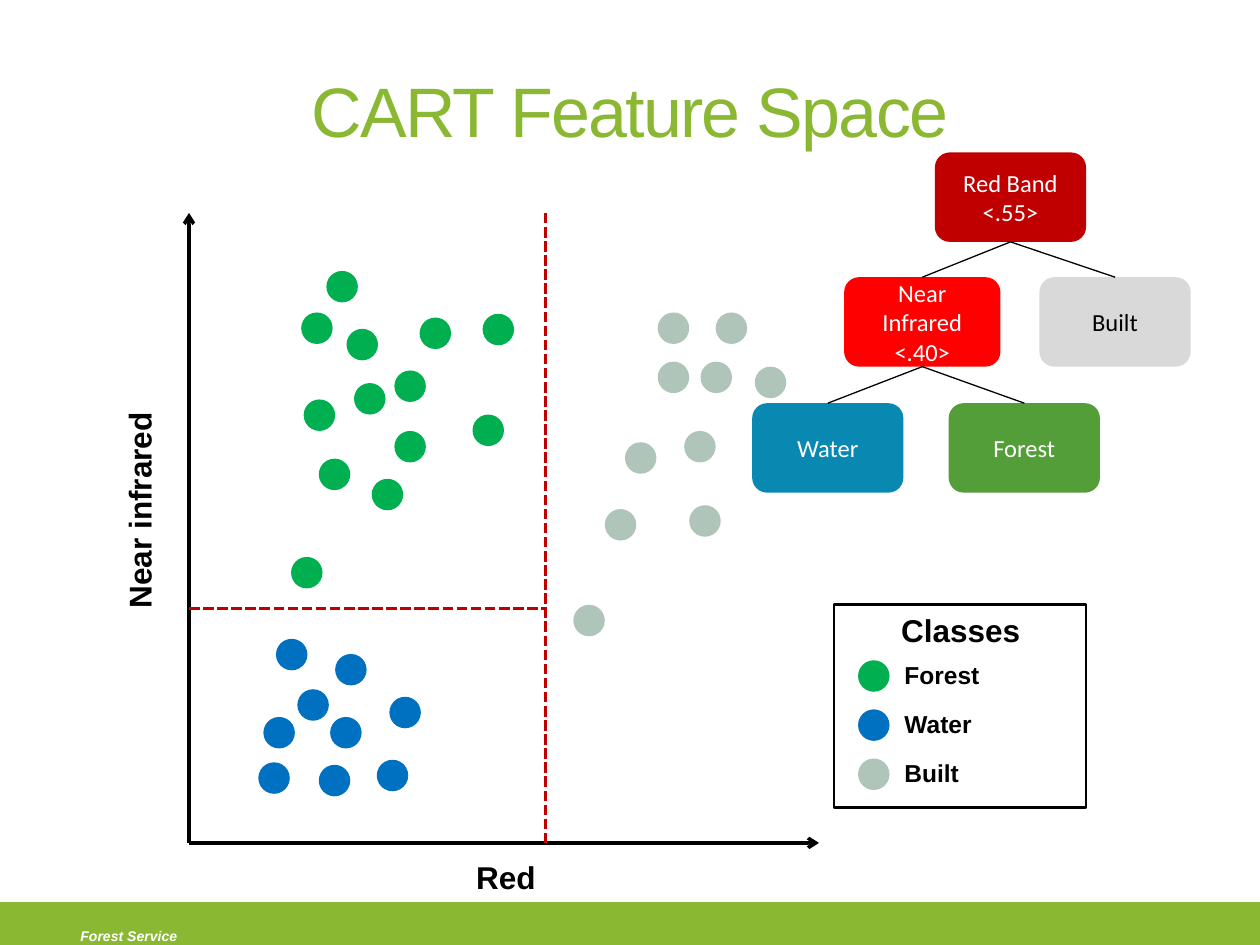
from dataclasses import dataclass

from lxml import etree
from pptx import Presentation
from pptx.dml.color import RGBColor
from pptx.enum.dml import MSO_LINE_DASH_STYLE as Dash
from pptx.enum.shapes import MSO_CONNECTOR, MSO_SHAPE as Shape
from pptx.enum.text import MSO_ANCHOR as Anchor, PP_ALIGN as Align
from pptx.oxml.ns import qn
from pptx.util import Inches, Pt


@dataclass(frozen=True)
class Theme:
    accent: str = "8AB833"
    ink: str = "000000"
    paper: str = "FFFFFF"
    split: str = "C00000"
    red_node: str = "C00000"
    infrared_node: str = "FF0000"
    built_node: str = "D9D9D9"
    water_node: str = "0989B1"
    forest_node: str = "549E39"
    forest: str = "00B050"
    water: str = "0070C0"
    built: str = "AFC5B9"
    font: str = "Arial"
    node_font: str = "Calibri"
    title_size: int = 40
    heading_size: int = 18
    label_size: int = 14
    footer_size: int = 8


THEME = Theme()
DOT = 0.25

# Dot corners, in inches from the top left of the plot
SAMPLES = {
    THEME.water: [(0.59, 4), (0.86, 3.78), (0.69, 3.38), (1.03, 4.38), (1.12, 4),
                  (1.16, 3.5), (0.55, 4.36), (1.49, 4.34), (1.59, 3.84)],
    THEME.forest: [(1.09, 0.46), (0.89, 0.79), (1.25, 0.92), (1.31, 1.35), (1.83, 0.83),
                   (1.03, 1.95), (2.33, 0.8), (1.63, 1.73), (0.91, 1.48), (1.63, 1.25),
                   (1.45, 2.11), (2.25, 1.6), (0.81, 2.73)],
    THEME.built: [(3.72, 1.18), (3.93, 1.73), (4.49, 1.22), (3.97, 2.32), (3.05, 3.11),
                  (3.46, 1.82), (4.06, 1.18), (3.3, 2.35), (3.72, 0.79), (4.18, 0.79)],
}


def color(value):
    return RGBColor.from_string(value)


def style_text(shape, text, size, ink=THEME.ink, font=THEME.font, bold=False,
               italic=False, align=Align.LEFT):
    shape.text_frame.text = text
    shape.text_frame.word_wrap = True
    for paragraph in shape.text_frame.paragraphs:
        paragraph.alignment = align
        for run in paragraph.runs:
            run.font.name, run.font.size = font, Pt(size)
            run.font.bold, run.font.italic = bold, italic
            run.font.color.rgb = color(ink)


def add_label(shapes, left, top, width, height, text, size, **style):
    label = shapes.add_textbox(*map(Inches, (left, top, width, height)))
    style_text(label, text, size, **style)
    return label


def add_block(shapes, kind, left, top, width, height, fill=None, line=None, weight=1.5):
    block = shapes.add_shape(kind, *map(Inches, (left, top, width, height)))
    block.shadow.inherit = False
    if fill:
        block.fill.solid()
        block.fill.fore_color.rgb = color(fill)
    else:
        block.fill.background()
    if line:
        block.line.color.rgb = color(line)
        block.line.width = Pt(weight)
    else:
        block.line.fill.background()
    return block


def add_dot(shapes, left, top, fill):
    add_block(shapes, Shape.FLOWCHART_CONNECTOR, left, top, DOT, DOT, fill)


def add_line(shapes, start, end, ink, weight, dash=None, arrow=False):
    line = shapes.add_connector(MSO_CONNECTOR.STRAIGHT, *map(Inches, (*start, *end)))
    line.line.color.rgb = color(ink)
    line.line.width = Pt(weight)
    if dash:
        line.line.dash_style = dash
    if arrow:
        etree.SubElement(line.line._get_or_add_ln(), qn("a:tailEnd"), type="arrow")
    etree.SubElement(line._element.spPr, qn("a:effectLst"))
    return line


def add_title(slide, left, top, width, height):
    title = slide.shapes.title
    title.left, title.top, title.width, title.height = map(Inches, (left, top, width, height))
    style_text(title, "CART Feature Space", THEME.title_size, THEME.accent, align=Align.CENTER)
    title.text_frame.vertical_anchor = Anchor.MIDDLE
    title.text_frame.paragraphs[0].runs[0].font._element.set("spc", "-100")


def add_footer(slide, left, top, width, height):
    add_block(slide.shapes, Shape.RECTANGLE, left, top, width, height,
              THEME.accent, THEME.accent, 2.08)
    add_label(slide.shapes, left + 0.54, top + 0.14, 2.04, 0.24, "Forest Service",
              THEME.footer_size, ink=THEME.paper, bold=True, italic=True)


def add_plot(slide, left, top, width, height):
    shapes = slide.shapes
    bottom = top + height
    split_x, split_y = left + 2.83, top + 3.14

    # Axes and their names
    for end in ((left, top), (left + width, bottom)):
        add_line(shapes, (left, bottom), end, THEME.ink, 2, arrow=True)
    heading = dict(size=THEME.heading_size, bold=True, align=Align.CENTER)
    vertical = add_label(shapes, left - 1.28, top + 2.16, 1.77, 0.4, "Near infrared", **heading)
    vertical.rotation = 270
    add_label(shapes, left + 1.63, bottom + 0.07, 1.77, 0.4, "Red", **heading)

    # Samples of each class
    for fill, corners in SAMPLES.items():
        for x, y in corners:
            add_dot(shapes, left + x, top + y, fill)

    # Decision boundaries
    for start, end in (((split_x, top), (split_x, bottom)),
                       ((left, split_y), (split_x, split_y))):
        add_line(shapes, start, end, THEME.split, 2, dash=Dash.SQUARE_DOT)


def add_legend(slide, left, top, width, height):
    shapes = slide.shapes.add_group_shape().shapes
    add_block(shapes, Shape.RECTANGLE, left, top, width, height, line=THEME.ink)
    add_label(shapes, left + 0.12, top, 1.77, 0.4, "Classes", THEME.heading_size,
              bold=True, align=Align.CENTER)
    classes = (("Forest", THEME.forest), ("Water", THEME.water), ("Built", THEME.built))
    for row, (name, fill) in enumerate(classes):
        row_top = top + 0.39 * (row + 1)
        add_dot(shapes, left + 0.19, row_top + 0.05, fill)
        add_label(shapes, left + 0.46, row_top, 1.77, 0.34, name, THEME.label_size, bold=True)


def add_tree(slide, left, top):
    def add_node(x, level, text, fill, ink=THEME.paper, width=1.2):
        node = add_block(slide.shapes, Shape.ROUNDED_RECTANGLE,
                         left + x, top + level, width, 0.71, fill)
        style_text(node, text, THEME.label_size, ink, THEME.node_font, align=Align.CENTER)
        node.text_frame.vertical_anchor = Anchor.MIDDLE
        return node

    red = add_node(1.45, 0, "Red Band\n<.55>", THEME.red_node)
    infrared = add_node(0.73, 0.99, "Near Infrared\n<.40>", THEME.infrared_node, width=1.24)
    built = add_node(2.28, 0.99, "Built", THEME.built_node, THEME.ink)
    water = add_node(0, 1.99, "Water", THEME.water_node)
    forest = add_node(1.56, 1.99, "Forest", THEME.forest_node)

    # Branches from parent to child
    for parent, child in ((red, infrared), (red, built), (infrared, water), (infrared, forest)):
        branch = add_line(slide.shapes, (left, top), (left, top), THEME.ink, 0.75)
        branch.begin_connect(parent, 2)
        branch.end_connect(child, 0)


def main():
    presentation = Presentation()
    presentation.slide_width, presentation.slide_height = Inches(10), Inches(7.5)
    slide = presentation.slides.add_slide(presentation.slide_layouts[5])
    add_footer(slide, 0, 7.17, 10, 0.36)
    add_title(slide, 0.5, 0.33, 9, 1.08)
    add_plot(slide, 1.5, 1.69, 5, 5)
    add_legend(slide, 6.62, 4.8, 2, 1.61)
    add_tree(slide, 5.97, 1.21)
    presentation.save("out.pptx")


if __name__ == "__main__":
    main()
